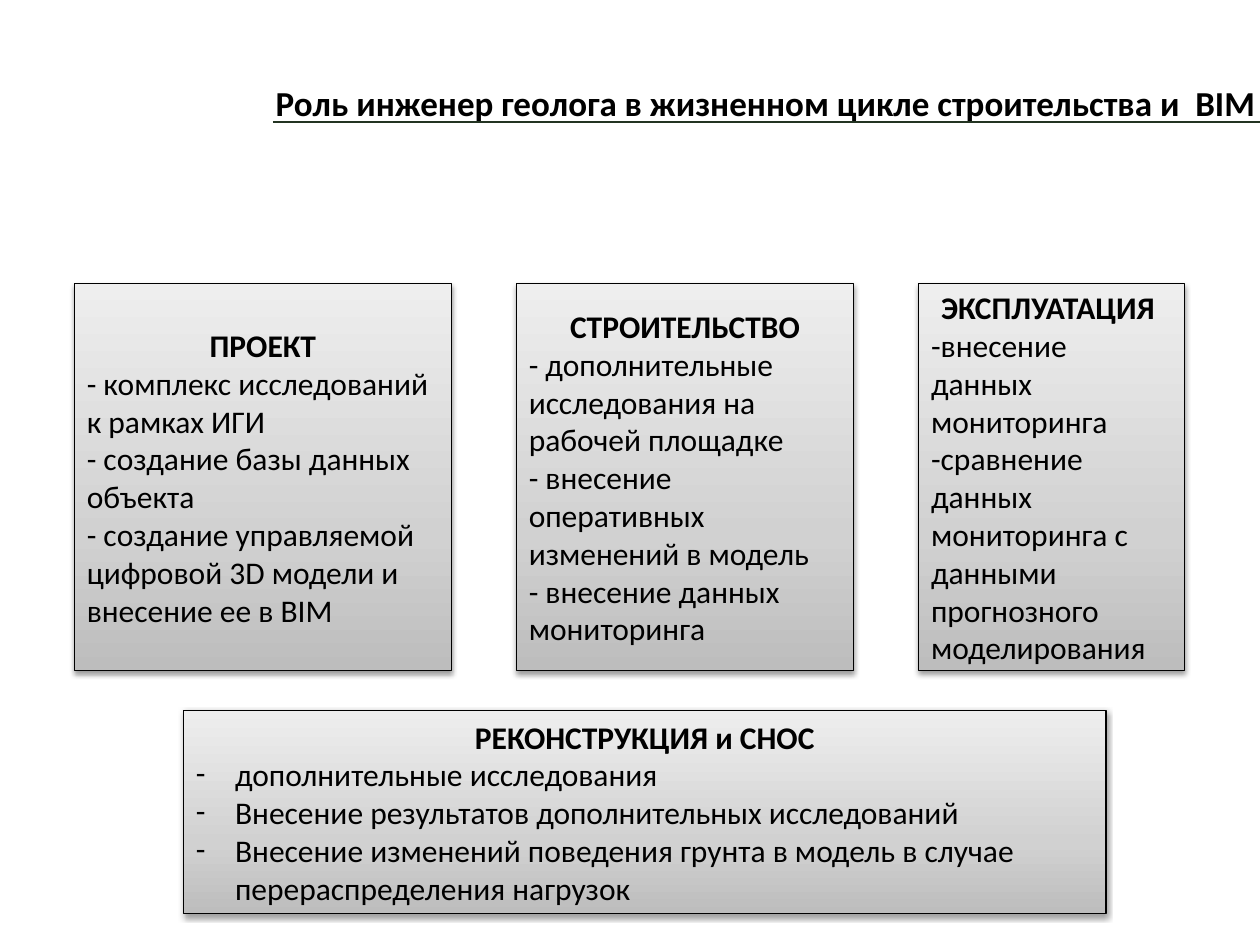
from dataclasses import dataclass

from lxml import etree
from pptx import Presentation
from pptx.dml.color import RGBColor
from pptx.enum import shapes, text
from pptx.oxml import ns
from pptx.util import Cm, Pt


@dataclass(frozen=True)
class Theme:
    font: str = "Calibri"
    title_size: int = 20
    body_size: int = 18
    ink: str = "000000"
    rule: str = "233422"
    gradient: tuple = ((0, "BDBDBD"), (35, "D1D1D1"), (100, "EEEEEE"))


def add_node(parent, tag, **attributes):
    values = {name: str(value) for name, value in attributes.items()}
    return etree.SubElement(parent, ns.qn(tag), values)


def write(para, content, *, font, size, color, bold=False, align=text.PP_ALIGN.LEFT):
    para.alignment = align
    para.space_before = Pt(0)
    span = para.add_run()
    span.text = content
    span.font.name = font
    span.font.size = Pt(size)
    span.font.bold = bold
    span.font.color.rgb = RGBColor.from_string(color)


class SlideBuilder:
    def __init__(self, deck, theme):
        self.theme = theme
        self.page = deck.slides.add_slide(deck.slide_layouts[5])

    def title(self, content, left, top, width, height):
        box = self.page.shapes.title
        box.left, box.top, box.width, box.height = map(Cm, (left, top, width, height))
        frame = box.text_frame
        frame.word_wrap = True
        frame.auto_size = text.MSO_AUTO_SIZE.NONE
        frame.vertical_anchor = text.MSO_ANCHOR.TOP
        write(frame.paragraphs[0], content, font=self.theme.font,
              size=self.theme.title_size, color=self.theme.ink, bold=True)

    def rule(self, left, right, top):
        line = self.page.shapes.add_connector(
            shapes.MSO_CONNECTOR.STRAIGHT, Cm(left), Cm(top), Cm(right), Cm(top))
        line.line.color.rgb = RGBColor.from_string(self.theme.rule)
        line.line.width = Pt(1)
        add_node(line._element.spPr, "a:effectLst")

    def paint(self, box):
        box.fill.gradient()
        box.fill.gradient_angle = 90
        box.line.color.rgb = RGBColor.from_string(self.theme.ink)
        box.line.width = Pt(0.75)
        box.shadow.inherit = False
        properties = box._element.spPr
        stops = properties.find(f".//{ns.qn('a:gsLst')}")
        for stop in list(stops):
            stops.remove(stop)
        for position, color in self.theme.gradient:
            stop = add_node(stops, "a:gs", pos=position * 1000)
            add_node(stop, "a:srgbClr", val=color)
        shadow = add_node(properties.find(ns.qn("a:effectLst")), "a:outerShdw",
                          blurRad=Pt(3.1), dist=Pt(1.6), dir=90 * 60000, rotWithShape=0)
        shade = add_node(shadow, "a:srgbClr", val=self.theme.ink)
        add_node(shade, "a:alpha", val=38000)

    def stage(self, heading, items, left, top, width, height, bullet=None):
        box = self.page.shapes.add_shape(
            shapes.MSO_SHAPE.RECTANGLE, Cm(left), Cm(top), Cm(width), Cm(height))
        self.paint(box)
        frame = box.text_frame
        frame.word_wrap = True
        frame.vertical_anchor = text.MSO_ANCHOR.MIDDLE
        style = dict(font=self.theme.font, size=self.theme.body_size, color=self.theme.ink)
        write(frame.paragraphs[0], heading, bold=True, align=text.PP_ALIGN.CENTER, **style)
        for item in items:
            para = frame.add_paragraph()
            write(para, item, **style)
            if bullet:
                properties = para._p.get_or_add_pPr()
                properties.set("marL", str(Cm(0.79)))
                properties.set("indent", str(-Cm(0.79)))
                add_node(properties, "a:buFont", typeface=self.theme.font)
                add_node(properties, "a:buChar", char=bullet)


STAGES = (
    (7.6, "ПРОЕКТ", (
        "- комплекс исследований к рамках ИГИ",
        "- создание базы данных объекта",
        "- создание управляемой цифровой 3D модели и внесение ее в BIM")),
    (6.8, "СТРОИТЕЛЬСТВО", (
        "- дополнительные исследования на рабочей площадке",
        "- внесение оперативных изменений в модель",
        "- внесение данных мониторинга")),
    (5.36, "ЭКСПЛУАТАЦИЯ ", (
        "-внесение данных мониторинга",
        "-сравнение данных мониторинга с данными прогнозного моделирования")),
)
RECONSTRUCTION = (
    "дополнительные исследования",
    "Внесение результатов дополнительных исследований",
    "Внесение изменений поведения грунта в модель в случае перераспределения нагрузок",
)


def main():
    deck = Presentation()
    deck.slide_width, deck.slide_height = Cm(25.4), Cm(19.05)
    builder = SlideBuilder(deck, Theme())
    builder.rule(5.5, 25.4, 2.46)
    builder.title("Роль инженер геолога в жизненном цикле строительства и  BIM",
                  5.3, 1.52, 25.2, 2)
    left, gap = 1.5, 1.31
    for width, heading, items in STAGES:
        builder.stage(heading, items, left, 5.72, width, 7.8)
        left += width + gap
    builder.stage("РЕКОНСТРУКЦИЯ и СНОС", RECONSTRUCTION, 3.7, 14.32, 18.6, 4.1, bullet="-")
    deck.save("out.pptx")


if __name__ == "__main__":
    main()
